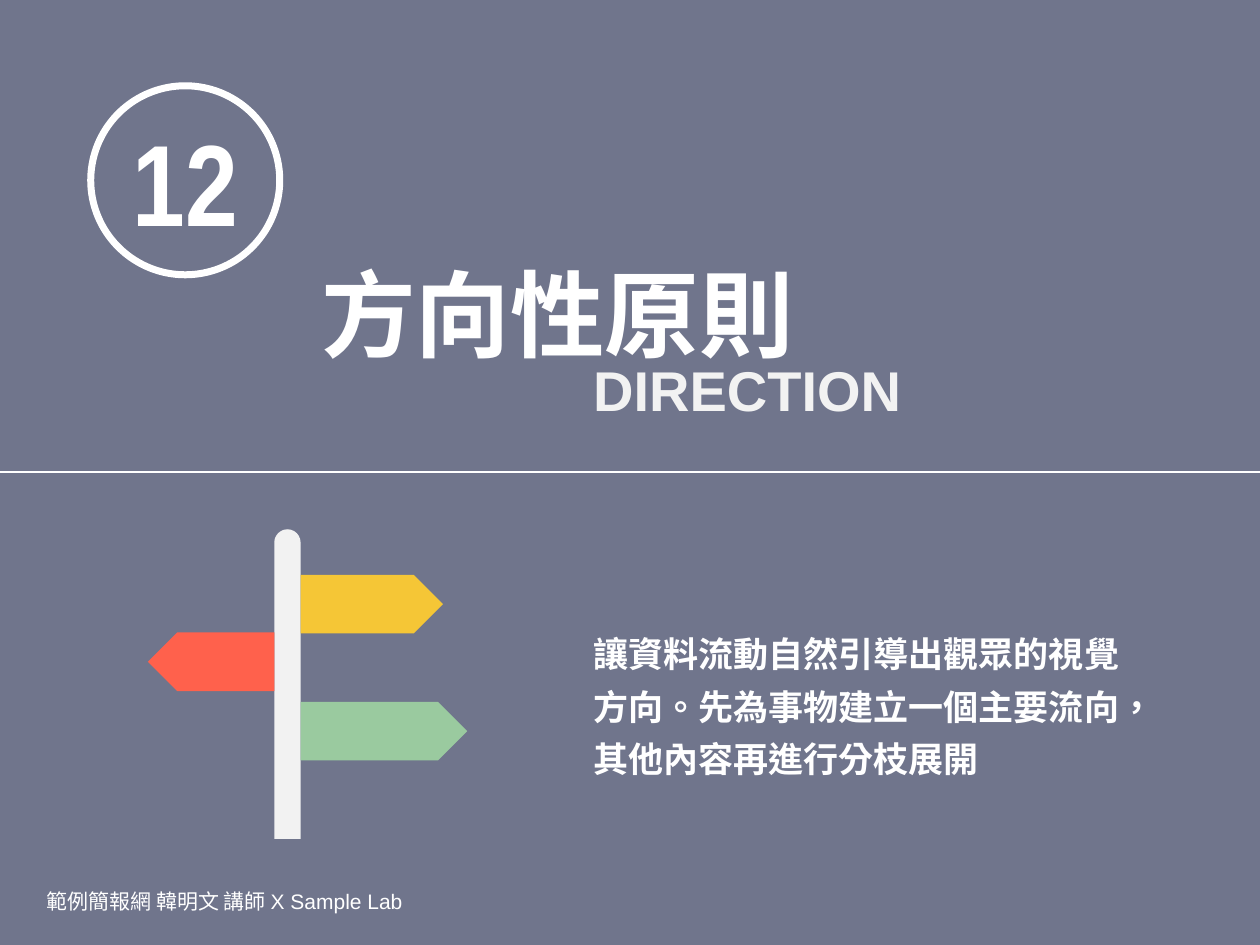
"""Build the section slide on the principle of direction."""
from dataclasses import dataclass

from pptx import Presentation
from pptx.dml.color import RGBColor
from pptx.enum.lang import MSO_LANGUAGE_ID as Language
from pptx.enum.shapes import MSO_CONNECTOR as Connector, MSO_SHAPE as Preset
from pptx.enum.text import MSO_ANCHOR as Anchor, MSO_AUTO_SIZE as AutoSize, PP_ALIGN as Align
from pptx.oxml.ns import qn
from pptx.shapes.autoshape import Shape
from pptx.slide import Slide
from pptx.util import Cm, Pt
from lxml.etree import SubElement

COLORS = {
    "background": "70758C",
    "white": "FFFFFF",
    "pale": "F2F2F2",
    "yellow": "F5C636",
    "red": "FF614C",
    "green": "9ACA9F",
}
WIDTH, HEIGHT = 25.4, 19.05
POST_LEFT, POST_TOP, POST_WIDTH, POST_HEIGHT = 5.53, 10.67, 0.53, 6.24
SIGN_HEIGHT = 1.18


@dataclass(frozen=True)
class Box:
    left: float
    top: float
    width: float
    height: float

    def lengths(self) -> tuple[Cm, Cm, Cm, Cm]:
        return Cm(self.left), Cm(self.top), Cm(self.width), Cm(self.height)


@dataclass(frozen=True)
class Label:
    text: str
    box: Box
    size: int
    color: str = "white"
    bold: bool = True
    anchor: Anchor = Anchor.TOP
    line_spacing: int | None = None


@dataclass(frozen=True)
class Sign:
    top: float
    width: float
    color: str
    points_left: bool = False


TITLE = Label("方向性原則", Box(6.22, 5.03, 10.97, 2.57), 54)
LABELS = (
    Label("DIRECTION", Box(11.71, 7.04, 10.49, 1.63), 32, "pale"),
    Label("讓資料流動自然引導出觀眾的視覺方向。先為事物建立一個主要流向，其他內容再進行分枝展開",
          Box(11.71, 12.42, 11.51, 3.45), 20, line_spacing=30),
    Label("範例簡報網 韓明文 講師 X Sample Lab", Box(0.69, 17.65, 12.01, 1.02), 12,
          bold=False, anchor=Anchor.MIDDLE),
)
SIGNS = (
    Sign(11.59, 2.87, "yellow"),
    Sign(12.75, 2.55, "red", points_left=True),
    Sign(14.15, 3.36, "green"),
)


def rgb(name: str) -> RGBColor:
    return RGBColor.from_string(COLORS[name])


def write(shape: Shape, label: Label, font_name: str = "Arial", align: Align = Align.LEFT) -> None:
    frame = shape.text_frame
    frame.word_wrap = True
    frame.auto_size = AutoSize.NONE
    frame.vertical_anchor = label.anchor
    paragraph = frame.paragraphs[0]
    paragraph.alignment = align
    if label.line_spacing:
        paragraph.line_spacing = Pt(label.line_spacing)
    run = paragraph.add_run()
    run.text = label.text
    font = run.font
    font.name, font.size, font.bold = font_name, Pt(label.size), label.bold
    font.color.rgb = rgb(label.color)
    font.language_id = Language.TRADITIONAL_CHINESE


def add_title(slide: Slide) -> None:
    title = slide.shapes.title
    title.left, title.top, title.width, title.height = TITLE.box.lengths()
    write(title, TITLE)


def add_label(slide: Slide, label: Label) -> None:
    write(slide.shapes.add_textbox(*label.box.lengths()), label)


def add_filled(slide: Slide, preset: Preset, box: Box, color: str) -> Shape:
    shape = slide.shapes.add_shape(preset, *box.lengths())
    shape.shadow.inherit = False
    shape.fill.solid()
    shape.fill.fore_color.rgb = rgb(color)
    shape.line.fill.background()
    return shape


def add_number(slide: Slide) -> None:
    label = Label("12", Box(1.83, 1.73, 3.81, 3.81), 66, anchor=Anchor.MIDDLE)
    circle = slide.shapes.add_shape(Preset.OVAL, *label.box.lengths())
    circle.shadow.inherit = False
    circle.fill.background()
    circle.line.color.rgb = rgb("white")
    circle.line.width = Pt(4)
    write(circle, label, "Arial Narrow", Align.CENTER)
    circle.text_frame.word_wrap = False


def add_divider(slide: Slide) -> None:
    middle = Cm(9.52)
    divider = slide.shapes.add_connector(Connector.STRAIGHT, 0, middle, Cm(WIDTH), middle)
    divider.line.color.rgb = rgb("white")
    divider.line.width = Pt(1)
    SubElement(divider._element.spPr, qn("a:effectLst"))


def add_post(slide: Slide) -> None:
    box = Box(POST_LEFT, POST_TOP, POST_WIDTH, POST_HEIGHT)
    post = add_filled(slide, Preset.ROUND_2_SAME_RECTANGLE, box, "pale")
    post.adjustments[0] = 0.5


def add_sign(slide: Slide, sign: Sign) -> None:
    left = POST_LEFT - sign.width if sign.points_left else POST_LEFT + POST_WIDTH
    box = Box(left, sign.top, sign.width, SIGN_HEIGHT)
    shape = add_filled(slide, Preset.PENTAGON, box, sign.color)
    if sign.points_left:
        shape.rotation = 180


def main() -> None:
    presentation = Presentation()
    presentation.slide_width, presentation.slide_height = Cm(WIDTH), Cm(HEIGHT)
    slide = presentation.slides.add_slide(presentation.slide_layouts.get_by_name("Title Only"))
    slide.background.fill.solid()
    slide.background.fill.fore_color.rgb = rgb("background")
    add_title(slide)
    add_number(slide)
    add_divider(slide)
    for label in LABELS:
        add_label(slide, label)
    add_post(slide)
    for sign in SIGNS:
        add_sign(slide, sign)
    presentation.save("out.pptx")


if __name__ == "__main__":
    main()
